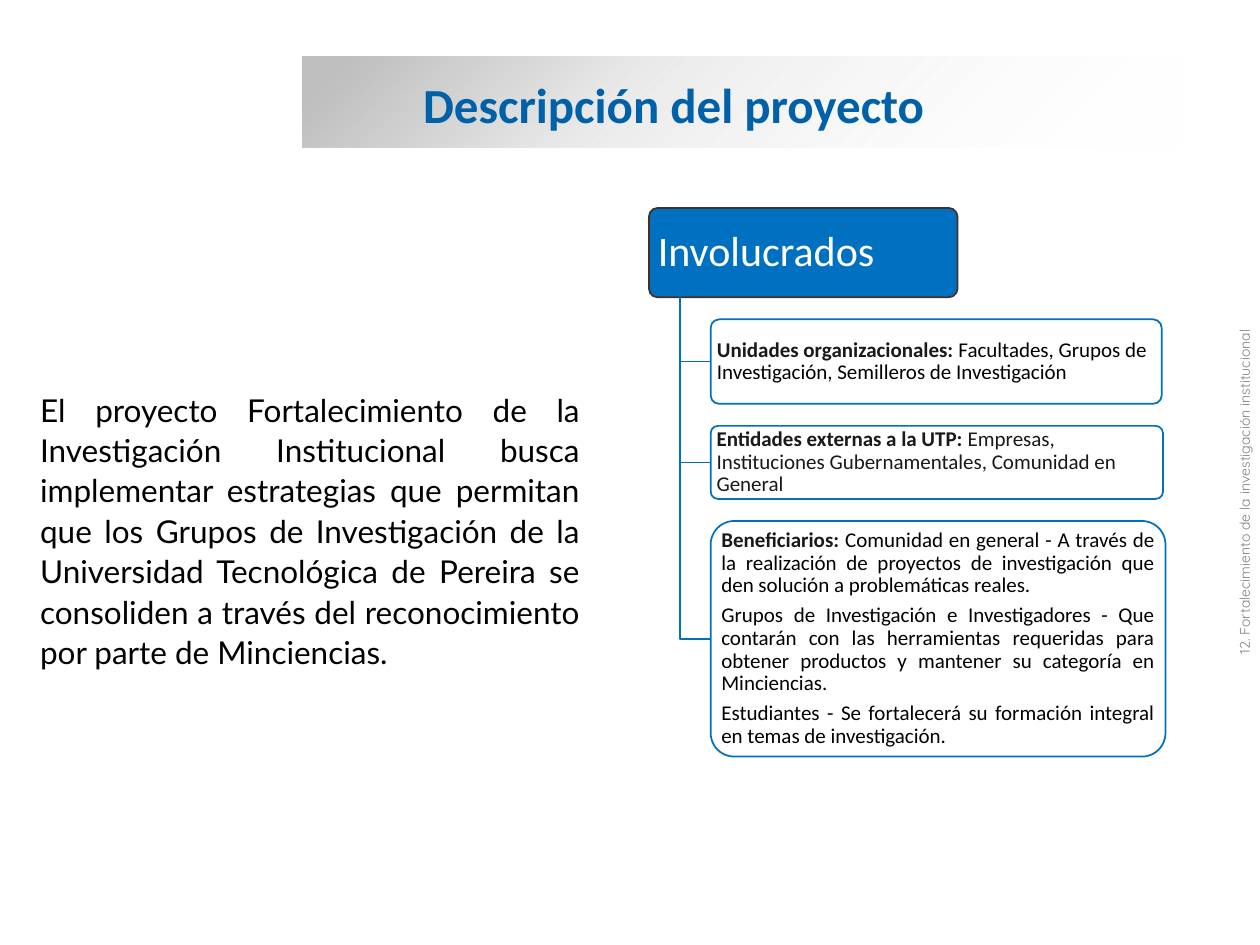
"""Build the project description slide with its diagram of those involved."""
from lxml import etree
from pptx import Presentation
from pptx.dml.color import RGBColor
from pptx.enum.shapes import MSO_SHAPE
from pptx.enum.text import MSO_ANCHOR, PP_ALIGN
from pptx.oxml.ns import qn
from pptx.util import Inches, Pt

RECT, ROUND = MSO_SHAPE.RECTANGLE, MSO_SHAPE.ROUNDED_RECTANGLE
TOP, MIDDLE = MSO_ANCHOR.TOP, MSO_ANCHOR.MIDDLE
LEFT, JUSTIFY = PP_ALIGN.LEFT, PP_ALIGN.JUSTIFY

COLORS = {"title": "0060A8", "blue": "0070C0", "edge": "3F3029", "white": "FFFFFF",
          "gray": "BFBFBF", "dark": "191919", "black": "000000", "note": "808080"}

TITLE = "Descripción del proyecto"
BODY = ("El proyecto Fortalecimiento de la Investigación Institucional busca implementar "
        "estrategias que permitan que los Grupos de Investigación de la Universidad "
        "Tecnológica de Pereira se consoliden a través del reconocimiento por parte de "
        "Minciencias.")
SIDE_NOTE = "12. Fortalecimiento de la investigación institucional"
ROOT = "Involucrados"
BRANCHES = [
    {"size": (3.58, 0.67), "align": LEFT, "color": "black", "label": "Unidades organizacionales: ",
     "texts": ["Facultades, Grupos de Investigación, Semilleros de Investigación"]},
    {"size": (3.59, 0.58), "align": LEFT, "color": "dark", "label": "Entidades externas a la UTP: ",
     "texts": ["Empresas, Instituciones Gubernamentales, Comunidad en General"]},
    {"size": (3.61, 1.87), "align": JUSTIFY, "color": "black", "label": "Beneficiarios: ",
     "texts": ["Comunidad en general - A través de la realización de proyectos de investigación "
               "que den solución a problemáticas reales.",
               "Grupos de Investigación e Investigadores - Que contarán con las herramientas "
               "requeridas para obtener productos y mantener su categoría en Minciencias.",
               "Estudiantes - Se fortalecerá su formación integral en temas de investigación."]},
]
BANNER_STOPS = [(5, "gray", 100), (37, "gray", 31), (100, "white", 0)]
ROOT_BOX = (5.15, 1.65, 2.45, 0.71)
TRUNK_X, BRANCH_X, GAP = 5.4, 5.64, 0.175


def rgb(name):
    return RGBColor.from_string(COLORS[name])


def set_alpha(color_element, percent):
    etree.SubElement(color_element, qn("a:alpha")).set("val", str(percent * 1000))


def add_paragraph(tf, runs, first, align=LEFT, **formats):
    p = tf.paragraphs[0] if first else tf.add_paragraph()
    p.alignment = align
    for name, value in formats.items():
        setattr(p, name, value)
    for text, font, size, color, bold in runs:
        r = p.add_run()
        r.text = text
        for name, value in {"name": font, "size": Pt(size), "bold": bold}.items():
            setattr(r.font, name, value)
        r.font.color.rgb = rgb(color)


def add_text(slide, box, run, anchor=TOP, **formats):
    s = slide.shapes.add_textbox(*map(Inches, box))
    s.text_frame.word_wrap = True
    s.text_frame.vertical_anchor = anchor
    add_paragraph(s.text_frame, [run], True, **formats)
    return s


def add_box(slide, box, fill, line, insets):
    s = slide.shapes.add_shape(ROUND, *map(Inches, box))
    s.adjustments[0] = 0.1
    s.shadow.inherit = False
    s.fill.solid()
    s.fill.fore_color.rgb = rgb(fill)
    s.line.color.rgb = rgb(line)
    s.line.width = Pt(1)
    tf = s.text_frame
    tf.word_wrap = True
    tf.vertical_anchor = MIDDLE
    for side, inset in zip(("left", "top", "right", "bottom"), insets * 2):
        setattr(tf, f"margin_{side}", Inches(inset))
    return s


def add_banner(slide):
    s = slide.shapes.add_shape(RECT, *map(Inches, (2.4, 0.45, 6.98, 0.72)))
    s.shadow.inherit = False
    s.line.fill.background()
    s.fill.gradient()
    s.fill.gradient_angle = 315
    stops = s.element.spPr.find(".//" + qn("a:gsLst"))
    for stop in list(stops):
        stops.remove(stop)
    for position, color, opacity in BANNER_STOPS:
        stop = etree.SubElement(stops, qn("a:gs"), pos=str(position * 1000))
        set_alpha(etree.SubElement(stop, qn("a:srgbClr"), val=COLORS[color]), opacity)


def add_elbow(slide, top, bottom):
    builder = slide.shapes.build_freeform(Inches(TRUNK_X), Inches(top))
    builder.add_line_segments(
        [(Inches(TRUNK_X), Inches(bottom)), (Inches(BRANCH_X), Inches(bottom))], close=False)
    s = builder.convert_to_shape()
    s.shadow.inherit = False
    s.fill.background()
    s.line.color.rgb = rgb("blue")
    s.line.width = Pt(1)


def add_diagram(slide):
    root = add_box(slide, ROOT_BOX, "blue", "edge", (0.05, 0.03))
    add_paragraph(root.text_frame, [(ROOT, "Calibri", 24, "white", False)], True, line_spacing=0.9)
    root_bottom = ROOT_BOX[1] + ROOT_BOX[3]
    top = root_bottom + GAP
    for branch in BRANCHES:
        width, height = branch["size"]
        add_elbow(slide, root_bottom, top + height / 2)
        s = add_box(slide, (BRANCH_X, top, width, height), "white", "blue", (0.03, 0.02))
        set_alpha(s.element.spPr.find(qn("a:solidFill"))[0], 90)
        for i, text in enumerate(branch["texts"]):
            runs = [(text, "Calibri", 12, branch["color"], False)]
            if i == 0:
                runs.insert(0, (branch["label"], "Calibri", 12, "dark", True))
            add_paragraph(s.text_frame, runs, i == 0, branch["align"],
                          line_spacing=0.9, space_after=Pt(4.2))
        top += height + GAP


def main():
    prs = Presentation()
    prs.slide_width, prs.slide_height = Inches(10), Inches(7.5)
    slide = prs.slides.add_slide(prs.slide_layouts[6])
    add_banner(slide)
    add_text(slide, (3.26, 0.54, 6.2, 0.57), (TITLE, "Calibri", 28, "title", True), MIDDLE)
    add_diagram(slide)
    add_text(slide, (0.22, 3.03, 4.48, 2.37), (BODY, "Lato", 18, "black", False),
             align=JUSTIFY, line_spacing=1.07)
    note = add_text(slide, (7.46, 2.75, 4.84, 0.24), (SIDE_NOTE, "Quicksand", 8, "note", False),
                    align=JUSTIFY)
    note.rotation = 270
    prs.save("out.pptx")


if __name__ == "__main__":
    main()
